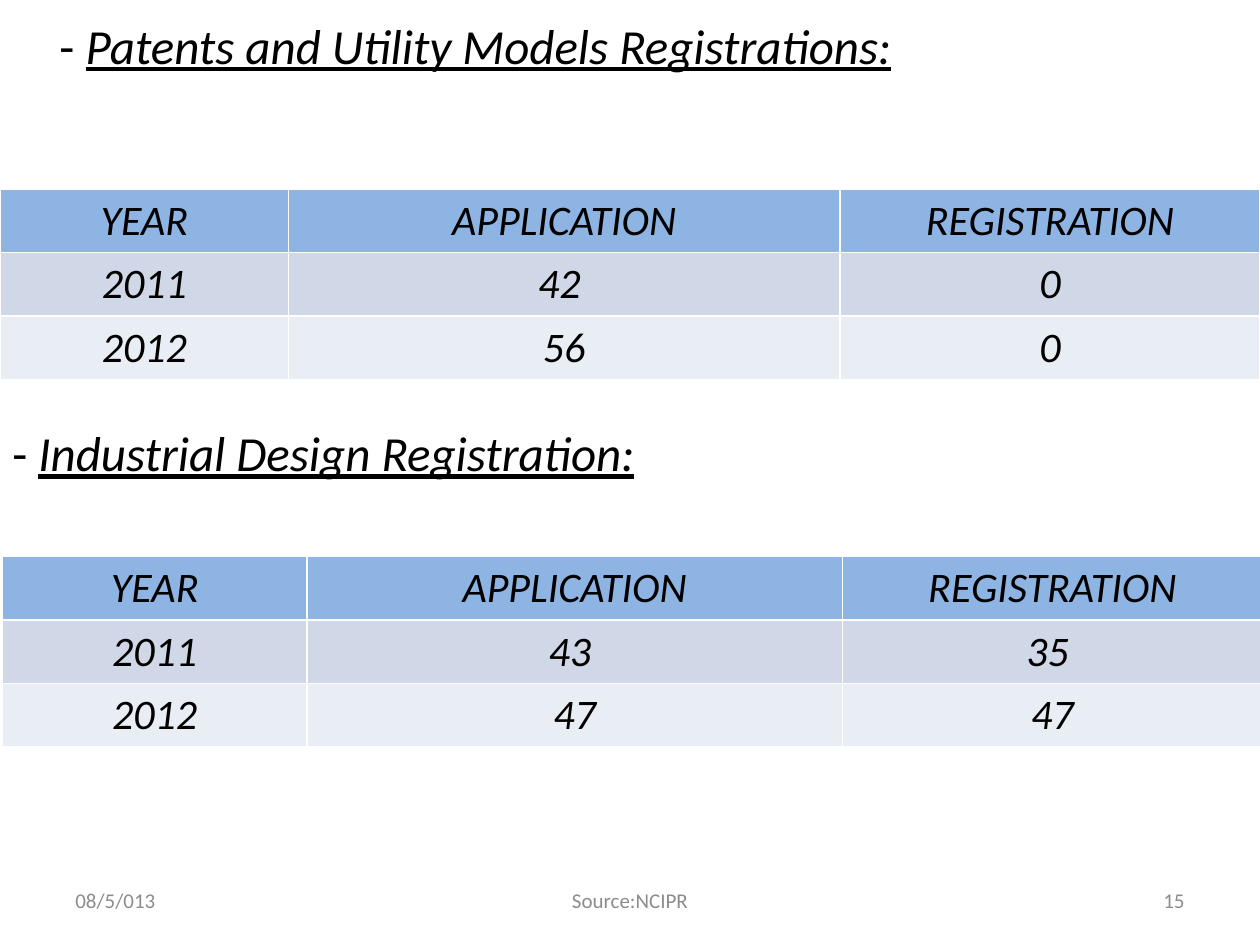
from lxml import etree
from pptx import Presentation
from pptx.dml.color import RGBColor
from pptx.enum.text import MSO_ANCHOR, PP_ALIGN
from pptx.oxml.ns import qn
from pptx.util import Cm, Pt

LEFT, CENTER, RIGHT = PP_ALIGN.LEFT, PP_ALIGN.CENTER, PP_ALIGN.RIGHT
TOP, MIDDLE = MSO_ANCHOR.TOP, MSO_ANCHOR.MIDDLE

FONT = "Calibri"
BLACK = RGBColor(0x00, 0x00, 0x00)
GRAY = RGBColor(0x8C, 0x8C, 0x8C)
HEADER_BLUE = RGBColor(0x8E, 0xB4, 0xE3)
BAND_DARK = RGBColor(0xD0, 0xD8, 0xE8)
BAND_LIGHT = RGBColor(0xE9, 0xED, 0xF4)
BORDER_WHITE = RGBColor(0xFF, 0xFF, 0xFF)

ROW_FILLS = (HEADER_BLUE, BAND_DARK, BAND_LIGHT)
ROW_HEIGHT = Cm(1.28)
HEADINGS = ("YEAR", "APPLICATION", "REGISTRATION")


def add_run(paragraph, text, size, color=BLACK, italic=False, underline=False):
    run = paragraph.add_run()
    run.text = text
    run.font.name = FONT
    run.font.size = Pt(size)
    run.font.color.rgb = color
    run.font.italic = italic
    run.font.underline = underline


def add_text_box(slide, left, top, width, height, alignment, anchor):
    """Add a wrapping text box and return its first paragraph."""
    frame = slide.shapes.add_textbox(left, top, width, height).text_frame
    frame.word_wrap = True
    frame.vertical_anchor = anchor
    paragraph = frame.paragraphs[0]
    paragraph.alignment = alignment
    return paragraph


def add_section_title(slide, text, left, top):
    paragraph = add_text_box(slide, left, top, Cm(22), Cm(1.46), LEFT, TOP)
    add_run(paragraph, "- ", 28)
    add_run(paragraph, text, 28, italic=True, underline=True)


def add_footer(slide, text, left, width, alignment):
    paragraph = add_text_box(slide, left, Cm(17.65), width, Cm(1.01), alignment, MIDDLE)
    add_run(paragraph, text, 12, GRAY)


def set_cell_borders(cell, color, width):
    properties = cell._tc.get_or_add_tcPr()
    for position, side in enumerate(("a:lnL", "a:lnR", "a:lnT", "a:lnB")):
        line = etree.Element(qn(side), w=str(width))
        fill = etree.SubElement(line, qn("a:solidFill"))
        etree.SubElement(fill, qn("a:srgbClr"), val=str(color))
        properties.insert(position, line)


def add_registration_table(slide, left, top, column_widths, records):
    rows = (HEADINGS, *records)
    table = slide.shapes.add_table(
        len(rows), len(HEADINGS), left, top, sum(column_widths), ROW_HEIGHT * len(rows)
    ).table
    for column, width in zip(table.columns, column_widths):
        column.width = width
    for row_index, (values, fill) in enumerate(zip(rows, ROW_FILLS)):
        table.rows[row_index].height = ROW_HEIGHT
        for column_index, value in enumerate(values):
            cell = table.cell(row_index, column_index)
            cell.fill.solid()
            cell.fill.fore_color.rgb = fill
            set_cell_borders(cell, BORDER_WHITE, Pt(1))
            paragraph = cell.text_frame.paragraphs[0]
            paragraph.alignment = CENTER
            add_run(paragraph, value, 24, italic=True)


def main():
    presentation = Presentation()
    presentation.slide_width = Cm(25.4)
    presentation.slide_height = Cm(19.05)
    slide = presentation.slides.add_slide(presentation.slide_layouts[6])

    add_section_title(slide, "Patents and Utility Models Registrations:", Cm(0.95), Cm(0.18))
    add_registration_table(
        slide, Cm(0), Cm(3.81), (Cm(5.82), Cm(11.11), Cm(8.47)),
        (("2011", "42 ", "0"), ("2012", "56", "0")),
    )
    add_section_title(slide, "Industrial Design Registration:", Cm(0), Cm(8.4))
    add_registration_table(
        slide, Cm(0.05), Cm(11.22), (Cm(6.14), Cm(10.79), Cm(8.47)),
        (("2011", "43 ", "35 "), ("2012", "47", "47")),
    )

    add_footer(slide, "Source:NCIPR", Cm(8.68), Cm(8.04), CENTER)
    add_footer(slide, "08/5/013", Cm(1.27), Cm(5.93), LEFT)
    add_footer(slide, "15", Cm(18.2), Cm(5.93), RIGHT)

    presentation.save("out.pptx")


if __name__ == "__main__":
    main()
